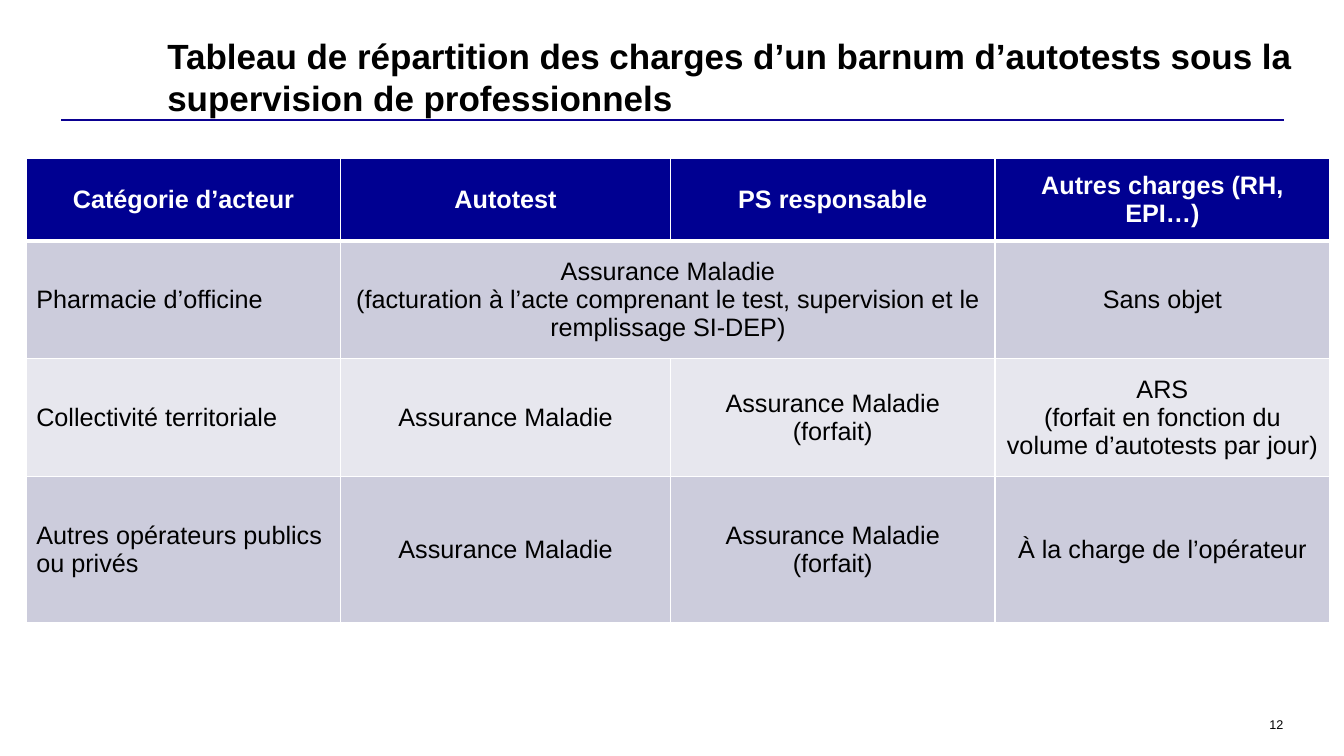
from lxml import etree
from pptx import Presentation
from pptx import util as u
from pptx.dml.color import RGBColor
from pptx.enum import shapes, text
from pptx.oxml import ns

PX = u.Inches(0.01)  # 100 px to the inch
NAVY = RGBColor(0x00, 0x00, 0x91)
RULE_BLUE = RGBColor(0x0A, 0x00, 0x91)
LILAC = RGBColor(0xCC, 0xCC, 0xDC)
PALE = RGBColor(0xE7, 0xE7, 0xEE)
WHITE = RGBColor(0xFF, 0xFF, 0xFF)
BLACK = RGBColor(0x00, 0x00, 0x00)

TITLE = ("Tableau de répartition des charges d’un barnum d’autotests "
         "sous la supervision de professionnels")
COLUMN_WIDTHS = [312, 327, 322, 332]
ROW_HEIGHTS = [82, 117, 117, 145]
INSURANCE = "Assurance Maladie"
FLAT_RATE = [INSURANCE, "(forfait)"]
# Each cell is a list of paragraphs; None continues the cell on its left.
ROWS = [
    [["Catégorie d’acteur"], ["Autotest"], ["PS responsable"],
     ["Autres charges (RH, EPI…)"]],
    [["Pharmacie d’officine"],
     [INSURANCE, "(facturation à l’acte comprenant le test, supervision et le "
                 "remplissage SI-DEP)"],
     None, ["Sans objet"]],
    [["Collectivité territoriale"], [INSURANCE], FLAT_RATE,
     ["ARS", "(forfait en fonction du volume d’autotests par jour)"]],
    [["Autres opérateurs publics ou privés"], [INSURANCE], FLAT_RATE,
     ["À la charge de l’opérateur"]],
]


def px(*lengths):
    return [length * PX for length in lengths]


def write(frame, lines, align, size, color=BLACK, bold=False):
    """Fill a text frame with one paragraph per line."""
    font_format = {"name": "Arial", "size": u.Pt(size), "bold": bold}
    for index, line in enumerate(lines):
        paragraph = frame.add_paragraph() if index else frame.paragraphs[0]
        paragraph.alignment = align
        run = paragraph.add_run()
        run.text = line
        for name, value in font_format.items():
            setattr(run.font, name, value)
        run.font.color.rgb = color


def add_label(slide, box, line, align, anchor, size, bold=False):
    frame = slide.shapes.add_textbox(*px(*box)).text_frame
    frame_format = {"word_wrap": True, "vertical_anchor": anchor,
                    "margin_left": 0, "margin_top": 0,
                    "margin_right": 0, "margin_bottom": 0}
    for name, value in frame_format.items():
        setattr(frame, name, value)
    write(frame, [line], align, size, bold=bold)


def add_header(slide, left, top, width, height):
    """Title with the rule that closes the header box."""
    add_label(slide, (left + 105, top, width - 76, 53), TITLE,
              text.PP_ALIGN.LEFT, text.MSO_ANCHOR.TOP, 25, bold=True)
    bottom = top + height
    rule = slide.shapes.add_connector(
        shapes.MSO_CONNECTOR.STRAIGHT, *px(left, bottom, left + width, bottom))
    rule.line.color.rgb = RULE_BLUE
    rule.line.width = u.Pt(1.75)
    etree.SubElement(rule.element.spPr, ns.qn("a:effectLst"))


def set_borders(cell, top, bottom):
    """White borders; top and bottom widths in points, sides 1 pt."""
    properties = cell._tc.get_or_add_tcPr()
    widths = {"L": 1, "R": 1, "T": top, "B": bottom}
    for index, (side, width) in enumerate(widths.items()):
        border = etree.Element(ns.qn("a:ln" + side), w=str(u.Pt(width)))
        fill = etree.SubElement(border, ns.qn("a:solidFill"))
        etree.SubElement(fill, ns.qn("a:srgbClr"), val=str(WHITE))
        properties.insert(index, border)


def add_charges_table(slide, left, top):
    box = px(left, top, sum(COLUMN_WIDTHS), sum(ROW_HEIGHTS))
    table = slide.shapes.add_table(len(ROWS), len(COLUMN_WIDTHS), *box).table
    for column, width in zip(table.columns, COLUMN_WIDTHS):
        column.width = width * PX
    for r, (row, height) in enumerate(zip(ROWS, ROW_HEIGHTS)):
        table.rows[r].height = height * PX
        header = r == 0
        for c, lines in enumerate(row):
            cell = table.cell(r, c)
            cell.fill.solid()
            cell.fill.fore_color.rgb = NAVY if header else LILAC if r % 2 else PALE
            set_borders(cell, top=3 if r == 1 else 1, bottom=3 if header else 1)
            if lines is None:
                table.cell(r, c - 1).merge(cell)
                continue
            cell.vertical_anchor = text.MSO_ANCHOR.MIDDLE
            centred = header or c > 0
            write(cell.text_frame, lines,
                  text.PP_ALIGN.CENTER if centred else text.PP_ALIGN.LEFT,
                  18, WHITE if header else BLACK, bold=header)


def main():
    presentation = Presentation()
    presentation.slide_width, presentation.slide_height = px(1333, 750)
    slide = presentation.slides.add_slide(presentation.slide_layouts[6])
    add_header(slide, 61, 34, 1212, 85)
    add_label(slide, (1237, 711, 36, 15), "12",
              text.PP_ALIGN.RIGHT, text.MSO_ANCHOR.BOTTOM, 9)
    add_charges_table(slide, 26, 157)
    presentation.save("out.pptx")


if __name__ == "__main__":
    main()
